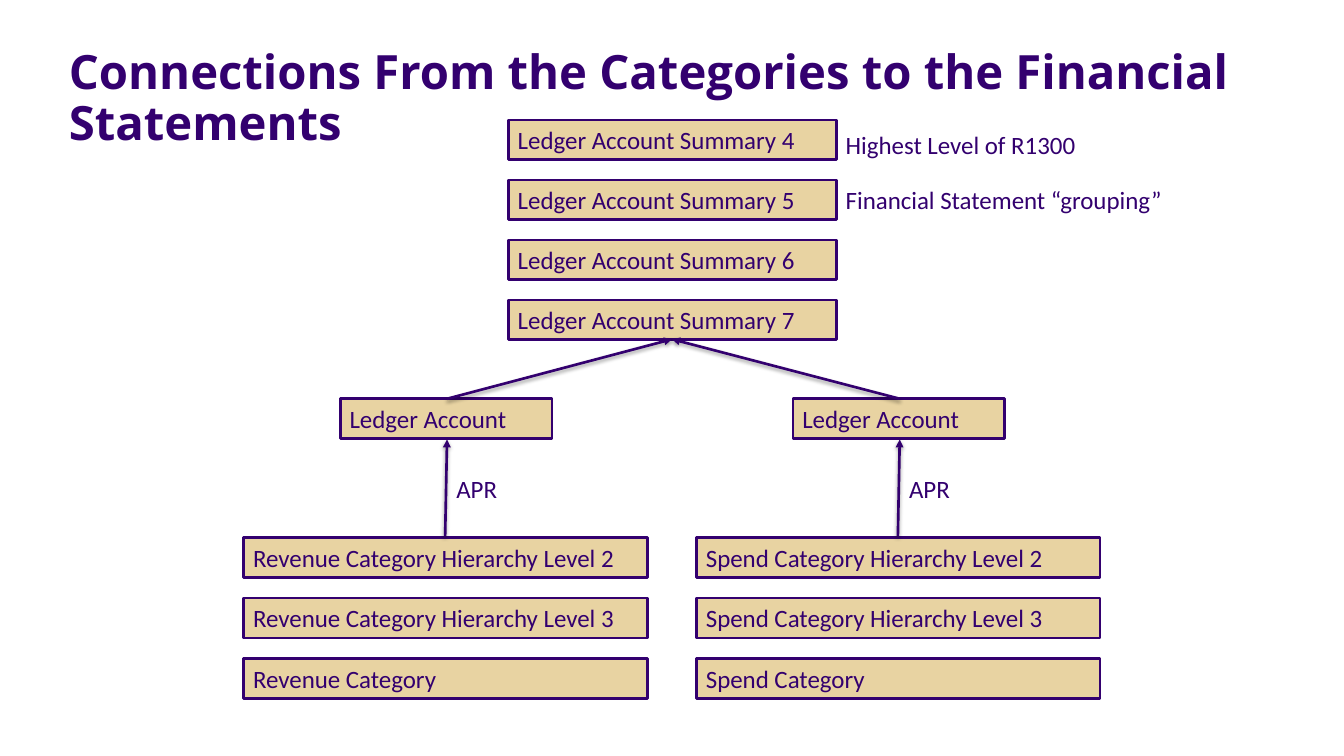
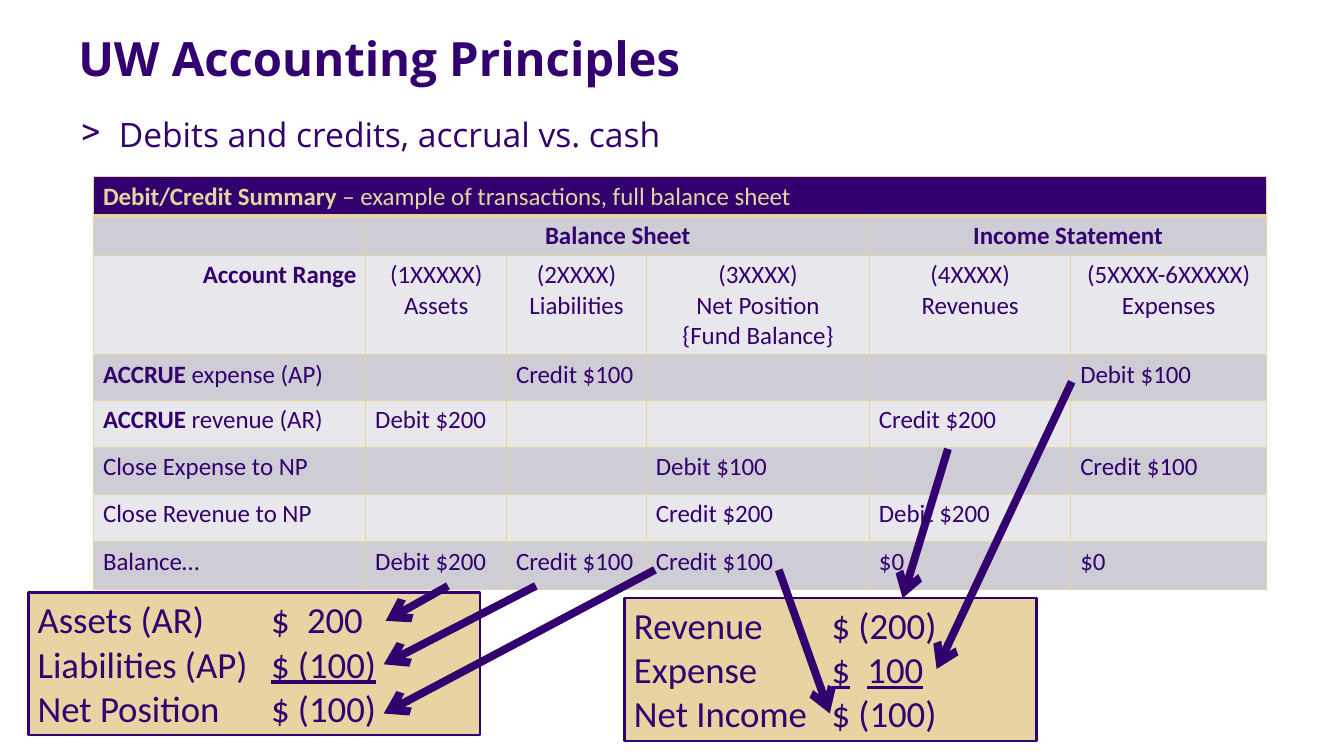
"""Build two slides on ledger hierarchies and accounting principles."""
from lxml import etree
from pptx import Presentation
from pptx.dml.color import RGBColor
from pptx.enum.shapes import MSO_CONNECTOR, MSO_SHAPE
from pptx.enum.text import MSO_ANCHOR, PP_ALIGN
from pptx.oxml.ns import qn
from pptx.util import Inches, Pt

STRAIGHT = MSO_CONNECTOR.STRAIGHT
RECTANGLE = MSO_SHAPE.RECTANGLE
TOP = MSO_ANCHOR.TOP
LEFT, CENTER, RIGHT = PP_ALIGN.LEFT, PP_ALIGN.CENTER, PP_ALIGN.RIGHT
PURPLE, GOLD, WHITE = "33006F", "E8D3A2", "FFFFFF"
DARK_BAND, LIGHT_BAND = "CECCD5", "E8E7EB"
BODY_FONT, TITLE_FONT = "Calibri", "Open Sans"
color = RGBColor.from_string


def write(frame, lines, size=19, name=BODY_FONT, ink=PURPLE, align=LEFT):
    """Fill a frame with lines, each a string or a list of (text, style) spans."""
    for index, line in enumerate(lines):
        para = frame.paragraphs[0] if index == 0 else frame.add_paragraph()
        para.alignment = align
        for text, style in [(line, "")] if isinstance(line, str) else line:
            span = para.add_run()
            span.text = text
            span.font.size = Pt(size)
            span.font.name = name
            span.font.bold = style == "bold"
            span.font.underline = style == "underline"
            span.font.color.rgb = color(ink)


def add_box(page, left, top, width, height, lines, filled=True, **text_format):
    """Add a gold box, or a plain text box, and return its text frame."""
    area = [Inches(value) for value in (left, top, width, height)]
    if filled:
        box = page.shapes.add_shape(RECTANGLE, *area)
        box.shadow.inherit = False
        box.fill.solid()
        box.fill.fore_color.rgb = color(GOLD)
        box.line.color.rgb = color(PURPLE)
        box.line.width = Pt(2)
    else:
        box = page.shapes.add_textbox(*area)
    box.text_frame.word_wrap = True
    box.text_frame.vertical_anchor = TOP
    write(box.text_frame, lines, **text_format)
    return box.text_frame


deck = Presentation()
deck.slide_width, deck.slide_height = Inches(14.22), Inches(8)
pages = []
for title, left, top, width in [
    ("Connections From the Categories to the Financial Statements", 0.63, 0.42, 13.59),
    ("UW Accounting Principles", 0.73, 0.29, 12.73),
]:
    page = deck.slides.add_slide(deck.slide_layouts[6])
    page.background.fill.solid()
    page.background.fill.fore_color.rgb = color(WHITE)
    frame = add_box(page, left, top, width, 0.52, [[(title, "bold")]],
                    filled=False, size=36, name=TITLE_FONT)
    frame.margin_top = Inches(0.09)
    frame.paragraphs[0].line_spacing = 0.9
    pages.append(page)
hierarchy_page, principles_page = pages

BOX_HEIGHT, STEP = 0.42, 0.635
for index in range(4):
    add_box(hierarchy_page, 5.38, 1.27 + index * STEP, 3.47, BOX_HEIGHT,
            [f"Ledger Account Summary {index + 4}"])
add_box(hierarchy_page, 8.85, 1.32, 3.06, 0.74, ["Highest Level of R1300"], filled=False)
add_box(hierarchy_page, 8.85, 1.9, 4.27, BOX_HEIGHT,
        ["Financial Statement “grouping”"], filled=False)

hierarchy_arrows = []
for kind, left in [("Revenue", 2.58), ("Spend", 7.37)]:
    levels = [f"{kind} Category Hierarchy Level 2",
              f"{kind} Category Hierarchy Level 3", f"{kind} Category"]
    for index, level in enumerate(levels):
        add_box(hierarchy_page, left, 5.69 + index * 0.64, 4.27, BOX_HEIGHT, [level])
    middle = left + 2.15
    add_box(hierarchy_page, middle - 1.13, 4.22, 2.24, BOX_HEIGHT, ["Ledger Account"])
    add_box(hierarchy_page, middle, 4.96, 1.28, BOX_HEIGHT, ["APR"], filled=False)
    hierarchy_arrows += [(middle, 4.22, 7.11, 3.59), (middle - 0.02, 5.67, middle, 4.65)]

frame = add_box(principles_page, 0.76, 1.2, 12.75, 5.92,
                ["Debits and credits, accrual vs. cash"],
                filled=False, size=25.6, name=TITLE_FONT)
frame.paragraphs[0].line_spacing = 0.9
bullet = frame.paragraphs[0]._p.get_or_add_pPr()
bullet.set("marL", str(Inches(0.4)))
bullet.set("indent", str(-Inches(0.4)))
etree.SubElement(bullet, qn("a:buChar"), char=">")

COLUMNS = [2.88, 1.49, 1.48, 2.36, 2.13, 2.07]
ROWS = [0.4, 0.4, 1.01, 0.48, 0.5, 0.5, 0.5, 0.5]
ENTRIES = [
    [[("Debit/Credit Summary ", "bold"),
      ("– example of transactions, full balance sheet", "")], "", "", "", "", ""],
    ["", [("Balance Sheet", "bold")], "", "", [("Income Statement", "bold")], ""],
    [[("Account Range", "bold")], "(1XXXXX)\nAssets", "(2XXXX)\nLiabilities",
     "(3XXXX)\nNet Position\n{Fund Balance}", "(4XXXX)\nRevenues",
     "(5XXXX-6XXXXX)\nExpenses"],
    [[("ACCRUE", "bold"), (" expense (AP)", "")], "", "Credit $100", "", "", "Debit $100"],
    [[("ACCRUE", "bold"), (" revenue (AR)", "")], "Debit $200", "", "", "Credit $200", ""],
    ["Close Expense to NP", "", "", "Debit $100", "", "Credit $100"],
    ["Close Revenue to NP", "", "", "Credit $200", "Debit $200", ""],
    ["Balance…", "Debit $200", "Credit $100", "Credit $100", "$0", "$0"],
]
summary = principles_page.shapes.add_table(
    len(ROWS), len(COLUMNS), Inches(0.99), Inches(1.87), Inches(12.4), Inches(4.37)).table
for column, width in zip(summary.columns, COLUMNS):
    column.width = Inches(width)
for row, height in zip(summary.rows, ROWS):
    row.height = Inches(height)
for row, first, last in [(0, 0, 5), (1, 1, 3), (1, 4, 5)]:
    summary.cell(row, first).merge(summary.cell(row, last))
for row, entries in enumerate(ENTRIES):
    for column, entry in enumerate(entries):
        cell = summary.cell(row, column)
        properties = cell._tc.get_or_add_tcPr()
        for side in "LRTB":
            heavy = (row, side) in [(0, "B"), (1, "T")]
            border = etree.SubElement(properties, qn(f"a:ln{side}"),
                                      w=str(Pt(3 if heavy else 1)))
            paint = etree.SubElement(border, qn("a:solidFill"))
            etree.SubElement(paint, qn("a:srgbClr"), val=GOLD)
        cell.fill.solid()
        band = DARK_BAND if row == 1 or row > 2 and row % 2 else LIGHT_BAND
        cell.fill.fore_color.rgb = color(PURPLE if row == 0 else band)
        if row == 2 and column == 0:
            align = RIGHT
        else:
            align = CENTER if row in (1, 2) else LEFT
        if entry:
            lines = entry.split("\n") if isinstance(entry, str) else [entry]
            write(cell.text_frame, lines, ink=GOLD if row == 0 else PURPLE, align=align)

STATEMENTS = [
    (6.61, 6.33, 4.36, 2.09, ["Revenue\t$ (200)",
                              [("Expense\t", ""), ("$\t100\t", "underline")],
                              "Net Income\t$ (100)"]),
    (0.3, 6.27, 4.78, 2.47, ["Assets (AR)\t$\t200",
                             [("Liabilities (AP)\t", ""), ("$ (100)\t", "underline")],
                             "Net Position\t$ (100)"]),
]
for left, top, width, amount, lines in STATEMENTS:
    frame = add_box(principles_page, left, top, width, 1.51, lines, size=28)
    for para in frame.paragraphs:
        stops = etree.SubElement(para._p.get_or_add_pPr(), qn("a:tabLst"))
        for offset in (0, 0.38, 1.22):
            etree.SubElement(stops, qn("a:tab"), pos=str(Inches(amount + offset)), algn="l")

statement_arrows = [
    (11.34, 4.04, 9.91, 7.08), (10.03, 4.75, 9.55, 6.33), (8.24, 6.03, 8.78, 7.55),
    (6.93, 6.03, 4.06, 7.55), (4.74, 6.2, 4.08, 6.57), (5.67, 6.2, 4.06, 7.03),
]
for page, arrows, weight, head, shaded in [
    (hierarchy_page, hierarchy_arrows, 2, "triangle", True),
    (principles_page, statement_arrows, 6, "arrow", False),
]:
    for ends in arrows:
        arrow = page.shapes.add_connector(STRAIGHT, *[Inches(value) for value in ends])
        arrow.line.color.rgb = color(PURPLE)
        arrow.line.width = Pt(weight)
        etree.SubElement(arrow.line._get_or_add_ln(), qn("a:tailEnd"), type=head)
        effects = etree.SubElement(arrow._element.spPr, qn("a:effectLst"))
        if shaded:
            shadow = etree.SubElement(effects, qn("a:outerShdw"), blurRad=str(Pt(3.1)),
                                      dist=str(Pt(1.6)), dir="5400000", rotWithShape="0")
            shade = etree.SubElement(shadow, qn("a:srgbClr"), val="000000")
            etree.SubElement(shade, qn("a:alpha"), val="38000")

deck.save("out.pptx")
